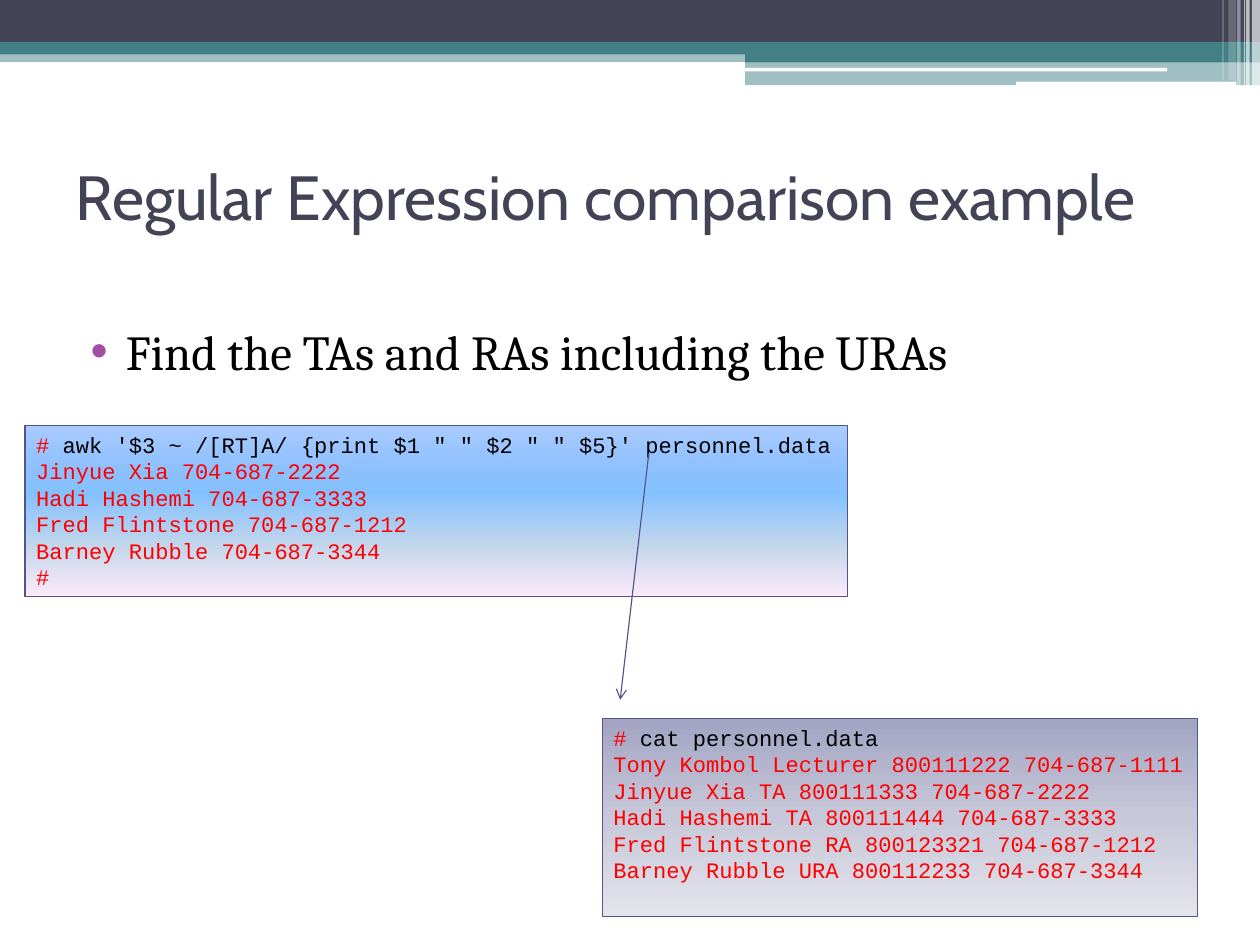
from lxml import etree
from pptx import Presentation
from pptx import util as u
from pptx.dml.color import RGBColor
from pptx.enum import shapes, text
from pptx.oxml import ns

Cm, Pt = u.Cm, u.Pt
WHITE = RGBColor(0xFF, 0xFF, 0xFF)
BLACK = RGBColor(0, 0, 0)
RED = RGBColor(0xFF, 0, 0)
TEAL = RGBColor(0x43, 0x80, 0x86)
SLATE = RGBColor(0x42, 0x44, 0x56)
INDIGO = RGBColor(0x53, 0x54, 0x8A)
PURPLE = RGBColor(0xA0, 0x4D, 0xA3)
MAUVE = [(0, RGBColor(0xA3, 0xA4, 0xC3), 100), (50, RGBColor(0xC7, 0xC8, 0xD9), 100),
         (100, RGBColor(0xE4, 0xE4, 0xEC), 100)]
SKY = [(0, RGBColor(0x5E, 0x9E, 0xFF), 51), (40, RGBColor(0x85, 0xC2, 0xFF), 100),
       (70, RGBColor(0xC4, 0xD6, 0xEB), 100), (100, RGBColor(0xFF, 0xEB, 0xFA), 100)]
RECT = shapes.MSO_SHAPE.RECTANGLE
ROUND = shapes.MSO_SHAPE.ROUNDED_RECTANGLE


def add(root, tag, **attrs):
    return etree.SubElement(root, ns.qn(tag), attrs)


def write(para, words, font):
    run = para.add_run()
    run.text = words
    for key, val in font.items():
        if key == "color":
            run.font.color.rgb = val
        else:
            setattr(run.font, key, val)


deck = Presentation()
deck.slide_width, deck.slide_height = Cm(28.22), Cm(21.16)
slide = deck.slides.add_slide(deck.slide_layouts[6])
parts = slide.shapes

# Header bands, then the thin stripes at the right edge
bands = [
    (RECT, 0, 1.14, 28.22, 0.25, TEAL, 50),
    (RECT, 0, 0, 28.22, 0.97, SLATE, 100),
    (RECT, 0, 0.94, 28.22, 0.28, TEAL, 100),
    (RECT, 16.69, 1.12, 11.53, 0.28, TEAL, 100),
    (RECT, 16.69, 1.35, 11.53, 0.56, TEAL, 50),
    (ROUND, 16.69, 1.52, 9.45, 0.08, WHITE, 100),
    (ROUND, 22.76, 1.83, 4.93, 0.1, WHITE, 100),
]
stripes = [(28.04, 0.18, 1.92, 65), (27.91, 0.08, 1.92, 65), (27.86, 0.03, 1.92, 60),
           (27.71, 0.08, 1.92, 40), (27.51, 0.18, 1.8, 20), (27.38, 0.03, 1.8, 30)]
bands += [(RECT, x, 0, w, h, WHITE, a) for x, w, h, a in stripes]
for kind, x, y, w, h, hue, alpha in bands:
    band = parts.add_shape(kind, Cm(x), Cm(y), Cm(w), Cm(h))
    band.shadow.inherit = False
    band.line.fill.background()
    band.fill.solid()
    band.fill.fore_color.rgb = hue
    if alpha < 100:
        tint = band.fill._xPr.find(".//" + ns.qn("a:srgbClr"))
        add(tint, "a:alpha", val=str(alpha * 1000))

# Title and bullet
heads = [
    ("Regular Expression comparison example", (1.42, 2.74, 26.24, 3.3), "MIDDLE", False,
     {"size": Pt(39.6), "name": "Cabin", "color": SLATE}),
    ("Find the TAs and RAs including the URAs", (1.42, 7.05, 23.93, 1.96), "TOP", True,
     {"size": Pt(31), "name": "Cambria", "color": BLACK}),
]
for words, spot, anchor, dot, font in heads:
    frame = parts.add_textbox(*map(Cm, spot)).text_frame
    style = {"word_wrap": True, "vertical_anchor": text.MSO_ANCHOR[anchor],
             "margin_left": Cm(0.28), "margin_right": Cm(0.28),
             "margin_top": Cm(0.15), "margin_bottom": Cm(0.15)}
    for key, val in style.items():
        setattr(frame, key, val)
    para = frame.paragraphs[0]
    if dot:
        props = para._p.get_or_add_pPr()
        props.set("marL", str(Cm(1.12)))
        props.set("indent", str(Cm(-0.79)))
        add(add(props, "a:buClr"), "a:srgbClr", val=str(PURPLE))
        add(props, "a:buFont", typeface="Arial")
        add(props, "a:buChar", char="•")
    write(para, words, font)

# Terminal panels: command after a red prompt, then its output
panels = [
    ((13.49, 16.09, 13.34, 4.44), MAUVE, " cat personnel.data",
     ["Tony Kombol Lecturer 800111222 704-687-1111",
      "Jinyue Xia TA 800111333 704-687-2222",
      "Hadi Hashemi TA 800111444 704-687-3333",
      "Fred Flintstone RA 800123321 704-687-1212",
      "Barney Rubble URA 800112233 704-687-3344"]),
    ((0.56, 9.53, 18.42, 3.83), SKY,
     """ awk '$3 ~ /[RT]A/ {print $1 " " $2 " " $5}' personnel.data""",
     ["Jinyue Xia 704-687-2222",
      "Hadi Hashemi 704-687-3333",
      "Fred Flintstone 704-687-1212",
      "Barney Rubble 704-687-3344",
      "#"]),
]
code = {"size": Pt(14), "name": "Courier New", "color": RED}
for spot, stops, cmd, rows in panels:
    panel = parts.add_shape(RECT, *map(Cm, spot))
    panel.shadow.inherit = False
    panel.line.color.rgb = INDIGO
    panel.line.width = Pt(0.75)
    panel.fill.gradient()
    panel.fill.gradient_angle = 270
    ramp = panel.fill._xPr.find(".//" + ns.qn("a:gsLst"))
    for old in list(ramp):
        ramp.remove(old)
    for pos, hue, alpha in stops:
        stop = add(ramp, "a:gs", pos=str(pos * 1000))
        tint = add(stop, "a:srgbClr", val=str(hue))
        if alpha < 100:
            add(tint, "a:alpha", val=str(alpha * 1000))
    frame = panel.text_frame
    frame.word_wrap = True
    frame.vertical_anchor = text.MSO_ANCHOR.TOP
    for i, row in enumerate(["#"] + rows):
        para = frame.add_paragraph() if i else frame.paragraphs[0]
        para.alignment = text.PP_ALIGN.LEFT
        write(para, row, code)
        if i == 0:
            write(para, cmd, {**code, "color": BLACK})

# Arrow from the file name to its contents
arrow = parts.add_connector(shapes.MSO_CONNECTOR.STRAIGHT,
                            Cm(14.53), Cm(10.16), Cm(13.89), Cm(15.67))
arrow.line.color.rgb = INDIGO
arrow.line.width = Pt(0.75)
add(arrow.line._get_or_add_ln(), "a:tailEnd", type="arrow")
add(arrow._element.spPr, "a:effectLst")

deck.save("out.pptx")
